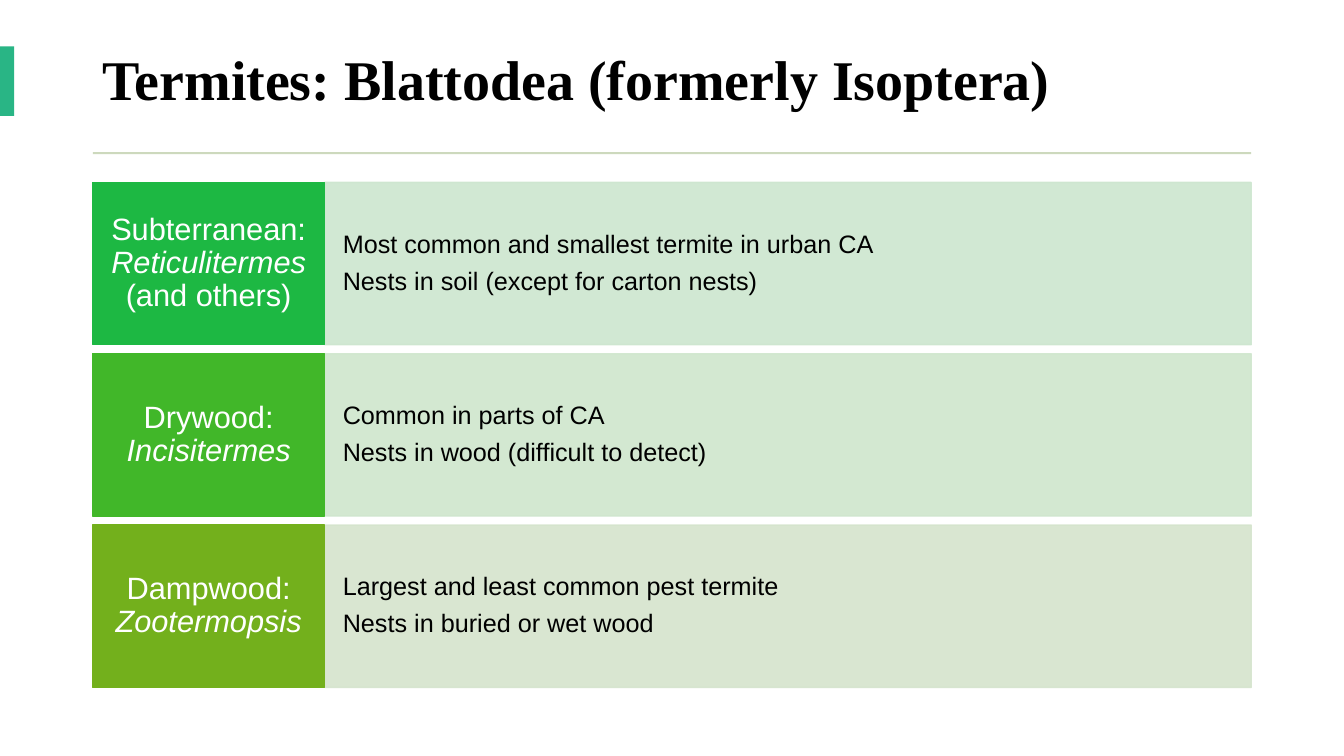
from pptx import Presentation
from pptx.dml.color import RGBColor
from pptx.enum.shapes import MSO_SHAPE
from pptx.enum.text import MSO_ANCHOR, PP_ALIGN
from pptx.oxml.ns import qn
from pptx.util import Inches, Pt
from lxml.etree import SubElement

THEME = {
    "accent": "29B585", "rule": "CDD9BD",
    "title": {"name": "Times New Roman", "size": Pt(40), "bold": True, "color": "000000"},
    "label": {"name": "Arial", "size": Pt(22), "color": "FFFFFF"},
    "detail": {"name": "Arial", "size": Pt(18), "color": "000000"},
    "panel_opacity": 90,
}

# Grid: one label column and one detail column, three equal rows
LEFT, WIDTH, LABEL_WIDTH = 0.92, 11.49, 2.3
TOP, ROW_HEIGHT, ROW_PITCH = 1.81, 1.61, 1.7

# Label runs are (text, italic)
TERMITES = [
    ([("Subterranean: ", False), ("Reticulitermes", True), (" (and others)", False)],
     ["Most common and smallest termite in urban CA", "Nests in soil (except for carton nests)"],
     "1DB843", "CDE6CF"),
    ([("Drywood: ", False), ("Incisitermes", True)],
     ["Common in parts of CA", "Nests in wood (difficult to detect)"],
     "41B729", "CFE6CD"),
    ([("Dampwood: ", False), ("Zootermopsis", True)],
     ["Largest and least common pest termite", "Nests in buried or wet wood"],
     "73B01C", "D5E4CD"),
]


def add_block(left, top, width, height, color, opacity=100, outlined=False):
    block = page.shapes.add_shape(
        MSO_SHAPE.RECTANGLE, Inches(left), Inches(top), Inches(width), Inches(height))
    block.shadow.inherit = False
    fills = [block.fill]
    if outlined:
        block.line.width = Pt(1)
        fills.append(block.line.fill)
    else:
        block.line.fill.background()
    for fill in fills:
        fill.solid()
        fill.fore_color.rgb = RGBColor.from_string(color)
    if opacity < 100:
        for shade in block._element.spPr.iter(qn("a:srgbClr")):
            SubElement(shade, qn("a:alpha"), val=str(opacity * 1000))
    return block


def write_text(box, paragraphs, style, align, margins, space_after=0):
    frame = box.text_frame
    side, end = (Inches(margin) for margin in margins)
    layout = {"word_wrap": True, "vertical_anchor": MSO_ANCHOR.MIDDLE, "margin_left": side,
              "margin_right": side, "margin_top": end, "margin_bottom": end}
    for name, value in layout.items():
        setattr(frame, name, value)
    for index, runs in enumerate(paragraphs):
        para = frame.add_paragraph() if index else frame.paragraphs[0]
        spacing = {"alignment": align, "line_spacing": 0.9, "space_after": Pt(space_after)}
        for name, value in spacing.items():
            setattr(para, name, value)
        for text, italic in runs:
            span = para.add_run()
            span.text = text
            span.font.italic = italic
            for name, value in style.items():
                if name == "color":
                    span.font.color.rgb = RGBColor.from_string(value)
                else:
                    setattr(span.font, name, value)


deck = Presentation()
deck.slide_width, deck.slide_height = Inches(13.33), Inches(7.5)
page = deck.slides.add_slide(deck.slide_layouts[6])

# Title with its side accent and rule
title = page.shapes.add_textbox(Inches(LEFT), Inches(0.27), Inches(WIDTH), Inches(1.1))
write_text(title, [[("Termites: Blattodea (formerly Isoptera)", False)]],
           THEME["title"], PP_ALIGN.LEFT, (0.1, 0.05))
add_block(0, 0.46, 0.14, 0.69, THEME["accent"])
add_block(LEFT, 1.51, WIDTH, 0.02, THEME["rule"])

# One row for each kind of termite
for row, (label_runs, facts, label_color, panel_color) in enumerate(TERMITES):
    top = TOP + row * ROW_PITCH
    panel = add_block(LEFT + LABEL_WIDTH, top, WIDTH - LABEL_WIDTH, ROW_HEIGHT,
                      panel_color, THEME["panel_opacity"], outlined=True)
    write_text(panel, [[(fact, False)] for fact in facts],
               THEME["detail"], PP_ALIGN.LEFT, (0.18, 0.41), 7)
    label = add_block(LEFT, top, LABEL_WIDTH, ROW_HEIGHT, label_color, outlined=True)
    write_text(label, [label_runs], THEME["label"], PP_ALIGN.CENTER, (0.12, 0.16))

deck.save("out.pptx")
